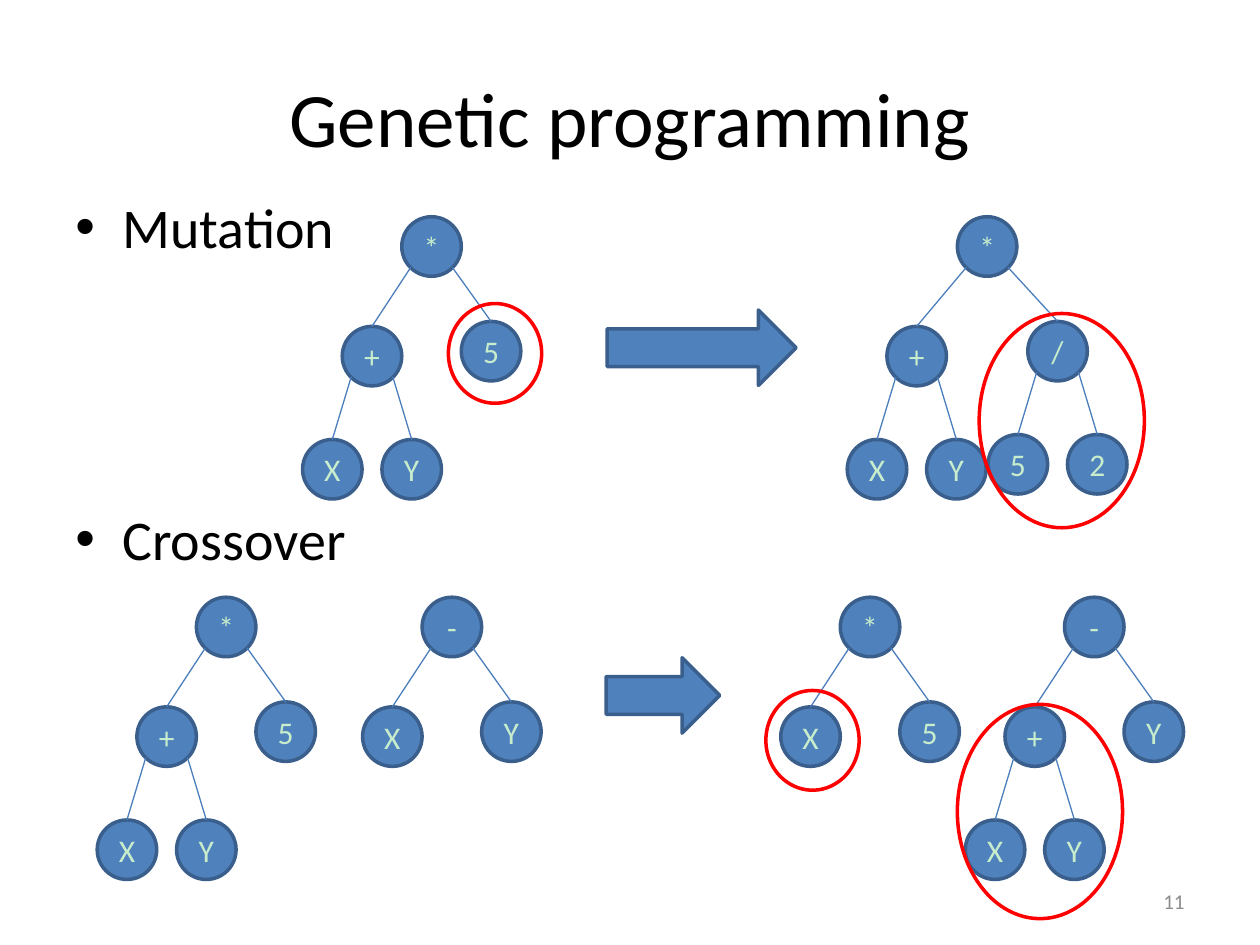
from dataclasses import dataclass
from typing import NamedTuple, Optional

from lxml import etree
from pptx import Presentation
from pptx.dml.color import RGBColor
from pptx.enum.shapes import MSO_CONNECTOR, MSO_SHAPE
from pptx.enum.text import MSO_ANCHOR, PP_ALIGN
from pptx.oxml.ns import qn
from pptx.util import Cm, Pt

CIRCLE = MSO_SHAPE.FLOWCHART_CONNECTOR
OVAL = MSO_SHAPE.OVAL
RIGHT_ARROW = MSO_SHAPE.RIGHT_ARROW
STRAIGHT = MSO_CONNECTOR.STRAIGHT
TOP, MIDDLE = MSO_ANCHOR.TOP, MSO_ANCHOR.MIDDLE
LEFT, CENTER, RIGHT = PP_ALIGN.LEFT, PP_ALIGN.CENTER, PP_ALIGN.RIGHT


@dataclass(frozen=True)
class Theme:
    font: str = "Calibri"
    text: RGBColor = RGBColor(0x00, 0x00, 0x00)
    muted: RGBColor = RGBColor(0x8C, 0x8C, 0x8C)
    node_text: RGBColor = RGBColor(0xC7, 0xED, 0xCC)
    fill: RGBColor = RGBColor(0x4F, 0x81, 0xBD)
    outline: RGBColor = RGBColor(0x3A, 0x5F, 0x8C)
    edge: RGBColor = RGBColor(0x4B, 0x7E, 0xBC)
    ring: RGBColor = RGBColor(0xFF, 0x00, 0x00)
    title_size: int = 44
    body_size: int = 32
    node_size: int = 18
    number_size: int = 12
    outline_width: float = 2
    edge_width: float = 0.75


THEME = Theme()

# All lengths below are centimetres.
RADIUS = 0.6
CORNER = 0.42  # offset of a circle's 45-degree point from its centre


class Box(NamedTuple):
    left: float
    top: float
    width: float
    height: float


@dataclass(frozen=True)
class Node:
    label: str
    left: Optional["Node"] = None
    right: Optional["Node"] = None
    spread: float = 1.2
    left_drop: float = 2.21
    right_drop: float = 2.11


class Tree(NamedTuple):
    x: float
    y: float
    root: Node


def subtree(label: str, left: str, right: str) -> Node:
    return Node(label, Node(left), Node(right), 0.8, 2.28, 2.28)


X, Y, FIVE = Node("X"), Node("Y"), Node("5")
X_PLUS_Y = subtree("+", "X", "Y")
MUTATION_Y, CROSSOVER_Y = 4.97, 12.64

TREES = (
    Tree(8.7, MUTATION_Y, Node("*", X_PLUS_Y, FIVE)),
    Tree(19.9, MUTATION_Y, Node("*", X_PLUS_Y, subtree("/", "5", "2"), spread=1.42)),
    Tree(4.56, CROSSOVER_Y, Node("*", X_PLUS_Y, FIVE)),
    Tree(9.11, CROSSOVER_Y, Node("-", X, Y)),
    Tree(17.54, CROSSOVER_Y, Node("*", X, FIVE)),
    Tree(22.06, CROSSOVER_Y, Node("-", X_PLUS_Y, Y)),
)
ARROWS = (Box(12.24, 6.25, 3.81, 1.52), Box(12.22, 13.26, 2.29, 1.52))
RINGS = (
    Box(19.3, 14.2, 3.33, 4.32),
    Box(15.44, 13.92, 1.88, 2.01),
    Box(19.74, 6.32, 3.33, 4.32),
    Box(9.04, 6.12, 1.88, 2.01),
)


def style(p, size: float, color: RGBColor, align) -> None:
    p.alignment = align
    p.font.name = THEME.font
    p.font.size = Pt(size)
    p.font.color.rgb = color


def add_text(slide, box: Box, lines: tuple, size: float, color: RGBColor, align, anchor):
    tf = slide.shapes.add_textbox(*map(Cm, box)).text_frame
    tf.word_wrap = True
    tf.vertical_anchor = anchor
    tf.text = "\n".join(lines)
    for p in tf.paragraphs:
        style(p, size, color, align)
    return tf


def add_bullet(p) -> None:
    pPr = p._p.get_or_add_pPr()
    pPr.set("marL", str(Cm(0.95)))
    pPr.set("indent", str(-Cm(0.95)))
    font = etree.Element(qn("a:buFont"), typeface="Arial")
    bullet = etree.Element(qn("a:buChar"), char="•")
    pPr.find(qn("a:defRPr")).addprevious(font)
    font.addnext(bullet)


def add_figure(slide, kind, box: Box, line: RGBColor, fill: Optional[RGBColor] = None):
    sp = slide.shapes.add_shape(kind, *map(Cm, box))
    sp.shadow.inherit = False
    if fill is None:
        sp.fill.background()
    else:
        sp.fill.solid()
        sp.fill.fore_color.rgb = fill
    sp.line.color.rgb = line
    sp.line.width = Pt(THEME.outline_width)
    return sp


def add_edge(slide, x1: float, y1: float, x2: float, y2: float) -> None:
    line = slide.shapes.add_connector(STRAIGHT, Cm(x1), Cm(y1), Cm(x2), Cm(y2))
    line.line.color.rgb = THEME.edge
    line.line.width = Pt(THEME.edge_width)
    etree.SubElement(line._element.spPr, qn("a:effectLst"))


def add_tree(slide, x: float, y: float, node: Node) -> None:
    """Draw a node centred on (x, y), then its children and their edges."""
    box = Box(x - RADIUS, y - RADIUS, 2 * RADIUS, 2 * RADIUS)
    tf = add_figure(slide, CIRCLE, box, THEME.outline, THEME.fill).text_frame
    tf.margin_left = tf.margin_right = tf.margin_top = tf.margin_bottom = 0
    tf.word_wrap = False
    tf.vertical_anchor = MIDDLE
    tf.text = node.label
    style(tf.paragraphs[0], THEME.node_size, THEME.node_text, CENTER)
    branches = ((node.left, -1, node.left_drop), (node.right, 1, node.right_drop))
    for child, side, drop in branches:
        if child is not None:
            child_x, child_y = x + side * node.spread, y + drop
            add_tree(slide, child_x, child_y, child)
            add_edge(slide, x + side * CORNER, y + CORNER, child_x, child_y - RADIUS)


def main() -> None:
    prs = Presentation()
    prs.slide_width, prs.slide_height = Cm(25.4), Cm(19.05)
    slide = prs.slides.add_slide(prs.slide_layouts[6])

    add_text(slide, Box(1.27, 0.76, 22.86, 3.18), ("Genetic programming",),
             THEME.title_size, THEME.text, CENTER, MIDDLE)
    body = add_text(slide, Box(1.27, 3.75, 22.86, 13.28), ("Mutation", "Crossover"),
                    THEME.body_size, THEME.text, LEFT, TOP)
    for p in body.paragraphs:
        add_bullet(p)
    body.paragraphs[1].space_before = Pt(140)

    for tree in TREES:
        add_tree(slide, tree.x, tree.y, tree.root)
    for box in ARROWS:
        add_figure(slide, RIGHT_ARROW, box, THEME.outline, THEME.fill)
    for box in RINGS:
        add_figure(slide, OVAL, box, THEME.ring)

    add_text(slide, Box(18.2, 17.66, 5.93, 1.01), ("11",),
             THEME.number_size, THEME.muted, RIGHT, MIDDLE)
    prs.save("out.pptx")


if __name__ == "__main__":
    main()
